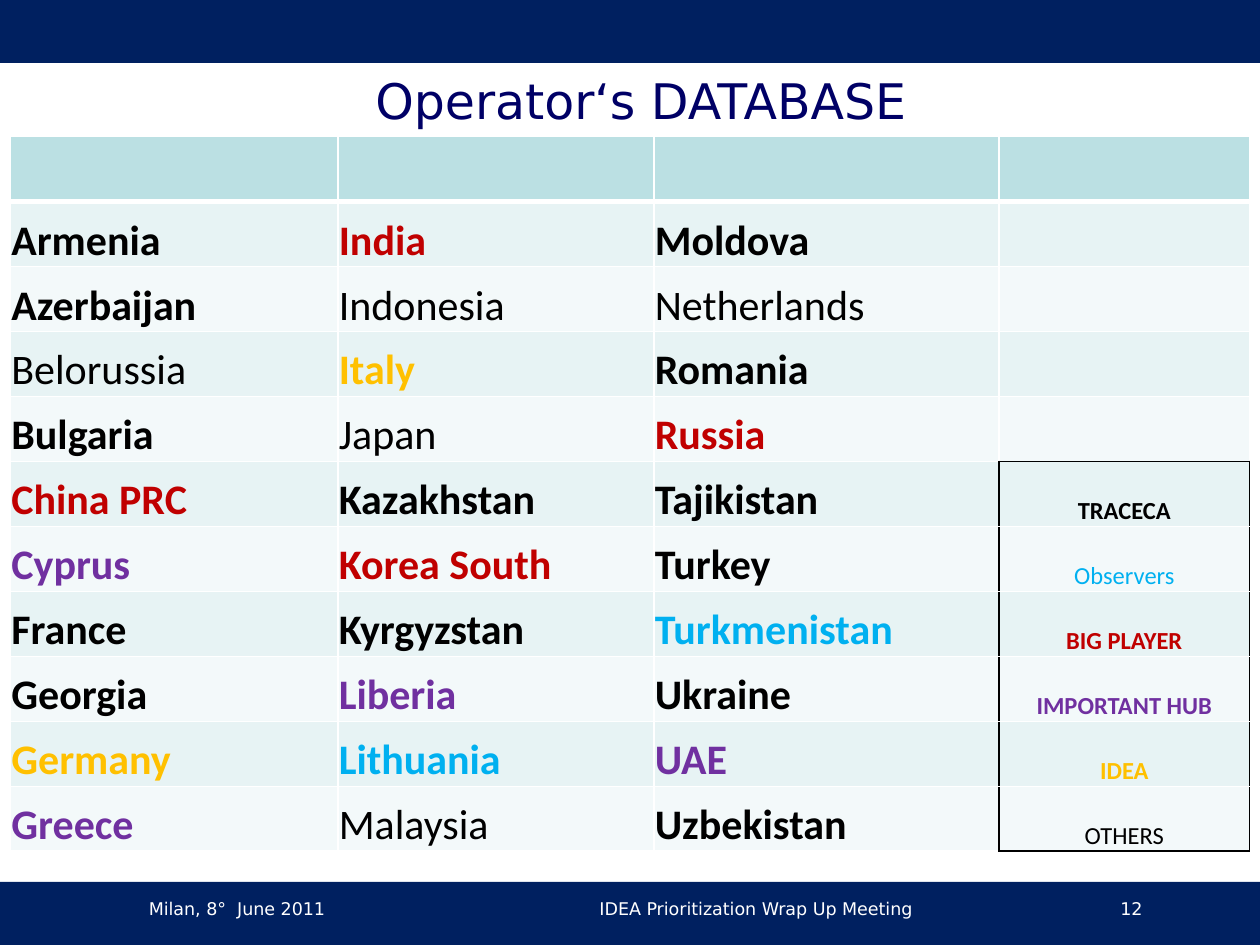
from dataclasses import dataclass

import pptx
import pptx.dml.color
import pptx.enum.shapes
import pptx.enum.text
import pptx.oxml
import pptx.oxml.ns
import pptx.util
from pptx.util import Cm, Pt

ALIGN = pptx.enum.text.PP_ALIGN
ANCHOR = pptx.enum.text.MSO_ANCHOR


@dataclass(frozen=True)
class Theme:
    navy: str = "002060"
    title: str = "000066"
    white: str = "FFFFFF"
    black: str = "000000"
    header: str = "BBE0E3"
    bands: tuple = ("E7F3F4", "F3F9FA")
    sans: str = "DejaVu Sans"
    table_font: str = "Calibri"
    title_size: int = 28
    country_size: int = 24
    legend_size: int = 14
    footer_size: int = 10


THEME = Theme()

# Group: (colour, bold)
GROUPS = {
    "TRACECA": ("000000", True),
    "Observers": ("00B0F0", True),
    "BIG PLAYER": ("C00000", True),
    "IMPORTANT HUB": ("7030A0", True),
    "IDEA": ("FFC000", True),
    "OTHERS": ("000000", False),
}

COUNTRIES = [
    ["Armenia", "Azerbaijan", "Belorussia", "Bulgaria", "China PRC",
     "Cyprus", "France", "Georgia", "Germany", "Greece"],
    ["India", "Indonesia", "Italy", "Japan", "Kazakhstan",
     "Korea South", "Kyrgyzstan", "Liberia", "Lithuania", "Malaysia"],
    ["Moldova", "Netherlands", "Romania", "Russia", "Tajikistan",
     "Turkey", "Turkmenistan", "Ukraine", "UAE", "Uzbekistan"],
]

# Countries outside the TRACECA group
MEMBERS = {
    "Observers": ["Lithuania", "Turkmenistan"],
    "BIG PLAYER": ["China PRC", "India", "Korea South", "Russia"],
    "IMPORTANT HUB": ["Cyprus", "Greece", "Liberia", "UAE"],
    "IDEA": ["Germany", "Italy"],
    "OTHERS": ["Belorussia", "Indonesia", "Japan", "Malaysia", "Netherlands"],
}
GROUP_OF = {name: group for group, names in MEMBERS.items() for name in names}

COL_WIDTHS = (6.6, 6.37, 6.96, 5.05)
ROW_HEIGHT = 1.31
ROWS = 1 + len(COUNTRIES[0])
LEGEND_COL = len(COUNTRIES)
LEGEND_TOP = ROWS - len(GROUPS)


def rgb(color):
    return pptx.dml.color.RGBColor.from_string(color)


def format_text(p, font, size, color, bold=False, align=ALIGN.LEFT):
    p.alignment = align
    p.font.name, p.font.size, p.font.bold = font, Pt(size), bold
    p.font.color.rgb = rgb(color)


def add_bar(s, top):
    sp = s.shapes.add_shape(pptx.enum.shapes.MSO_SHAPE.RECTANGLE,
                            0, Cm(top), Cm(25.4), Cm(1.27))
    sp.shadow.inherit = False
    sp.fill.solid()
    sp.fill.fore_color.rgb = rgb(THEME.navy)
    sp.line.fill.background()


def set_title(s, text):
    sp = s.shapes.title
    sp.left, sp.top, sp.width, sp.height = Cm(1.27), Cm(1.27), Cm(23.29), Cm(1.47)
    tf = sp.text_frame
    tf.text = text
    tf.vertical_anchor = ANCHOR.MIDDLE
    format_text(tf.paragraphs[0], THEME.sans, THEME.title_size, THEME.title,
                align=ALIGN.CENTER)


def add_footer(s, left, width, text, align):
    tf = s.shapes.add_textbox(Cm(left), Cm(17.98), Cm(width), Cm(1.06)).text_frame
    tf.word_wrap = True
    tf.text = text
    format_text(tf.paragraphs[0], THEME.sans, THEME.footer_size, THEME.white, align=align)


def set_borders(cell, borders):
    """Draw borders given as side: (colour, points), in the order L, R, T, B."""
    tcPr = cell._tc.get_or_add_tcPr()
    for i, (side, (color, width)) in enumerate(borders.items()):
        tcPr.insert(i, pptx.oxml.parse_xml(
            f'<a:ln{side} {pptx.oxml.ns.nsdecls("a")} w="{Pt(width)}">'
            f'<a:solidFill><a:srgbClr val="{color}"/></a:solidFill></a:ln{side}>'))


def cell_borders(row, col):
    """White grid, a thick line below the header and a black frame round the legend."""
    black, white = (THEME.black, 1), (THEME.white, 1)
    beside = row >= LEGEND_TOP
    legend = col == LEGEND_COL

    def line(framed):
        return black if framed else white

    borders = {
        "L": line(beside and legend),
        "R": line(beside and col >= LEGEND_COL - 1),
        "T": line(legend and row == LEGEND_TOP),
        "B": line(legend and row in (LEGEND_TOP - 1, ROWS - 1)),
    }
    if row == 0:
        borders["B"] = (THEME.white, 3)
    if row == 1:
        borders["T"] = (THEME.white, 3)
    return borders


def fill_text(cell, text, group, size, align=ALIGN.LEFT):
    color, bold = GROUPS[group]
    cell.text = text
    cell.vertical_anchor = ANCHOR.BOTTOM
    cell.margin_left = cell.margin_right = cell.margin_top = Cm(0.02)
    cell.margin_bottom = 0
    format_text(cell.text_frame.paragraphs[0], THEME.table_font, size, color, bold, align)


def add_country_table(s):
    table = s.shapes.add_table(ROWS, len(COL_WIDTHS), Cm(0.21), Cm(2.75),
                               Cm(sum(COL_WIDTHS)), Cm(ROWS * ROW_HEIGHT)).table
    for column, width in zip(table.columns, COL_WIDTHS):
        column.width = Cm(width)
    for i, row in enumerate(table.rows):
        row.height = Cm(ROW_HEIGHT)
        for j, cell in enumerate(row.cells):
            cell.fill.solid()
            cell.fill.fore_color.rgb = rgb(THEME.bands[(i - 1) % 2] if i else THEME.header)
            set_borders(cell, cell_borders(i, j))
    for j, names in enumerate(COUNTRIES):
        for i, name in enumerate(names, 1):
            fill_text(table.cell(i, j), name, GROUP_OF.get(name, "TRACECA"),
                      THEME.country_size)
    for i, group in enumerate(GROUPS, LEGEND_TOP):
        fill_text(table.cell(i, LEGEND_COL), group, group, THEME.legend_size, ALIGN.CENTER)
    observers = table.cell(LEGEND_TOP + 1, LEGEND_COL)
    observers.text_frame.paragraphs[0].font.bold = False


def main():
    prs = pptx.Presentation()
    prs.slide_width, prs.slide_height = Cm(25.4), Cm(19.05)
    s = prs.slides.add_slide(prs.slide_layouts[5])
    for top in (17.78, 0):
        add_bar(s, top)
    set_title(s, "Operator‘s DATABASE")
    add_country_table(s)
    add_footer(s, 2.75, 5.92, "Milan, 8°  June 2011", ALIGN.LEFT)
    add_footer(s, 8.89, 12.7, "IDEA Prioritization Wrap Up Meeting", ALIGN.CENTER)
    add_footer(s, 21.8, 1.48, "12", ALIGN.RIGHT)
    prs.save("out.pptx")


if __name__ == "__main__":
    main()
